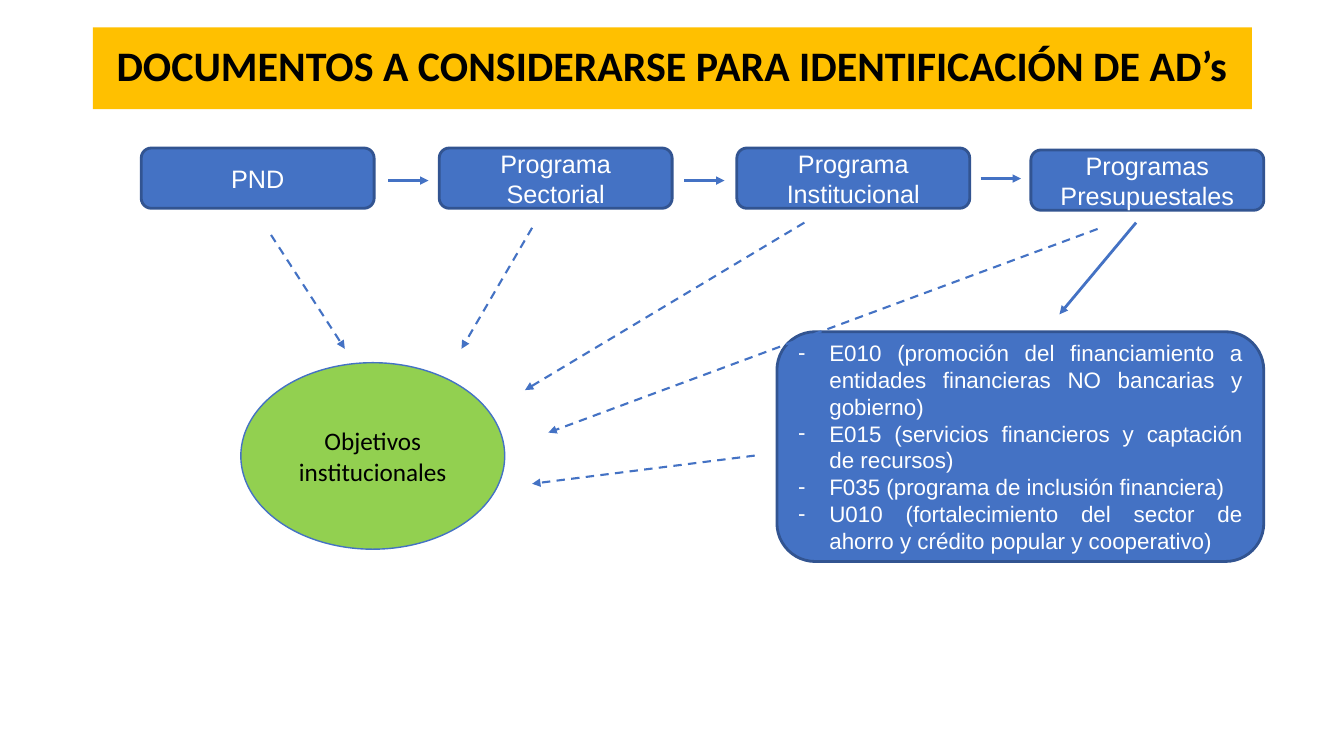
"""Builds the slide on the documents used to identify AD's."""
from dataclasses import dataclass

from lxml.etree import SubElement
from pptx import Presentation
from pptx.dml.color import RGBColor
from pptx.enum.dml import MSO_LINE
from pptx.enum.shapes import MSO_CONNECTOR, MSO_SHAPE
from pptx.enum.text import MSO_ANCHOR, PP_ALIGN
from pptx.oxml.ns import qn
from pptx.util import Cm, Pt

TITLE = "DOCUMENTOS A CONSIDERARSE PARA IDENTIFICACIÓN DE AD’s"
TITLE_FRAME = (2.34, 0.69, 29.21, 2.06)
DOCUMENTS = [
    ("PND", 3.56, 3.73),
    ("Programa Sectorial", 11.07, 3.73),
    ("Programa Institucional", 18.57, 3.73),
    ("Programas Presupuestales", 25.98, 3.78),
]
DOCUMENT_SIZE = (5.87, 1.52)
PROGRAMS = [
    "E010 (promoción del financiamiento a entidades financieras NO bancarias y gobierno)",
    "E015 (servicios financieros y captación de recursos)",
    "F035 (programa de inclusión financiera)",
    "U010 (fortalecimiento del sector de ahorro y crédito popular y cooperativo)",
]
PROGRAMS_FRAME = (19.58, 8.36, 12.27, 5.79)
GOAL = "Objetivos institucionales"
GOAL_FRAME = (6.07, 9.14, 6.65, 4.7)
SEQUENCE_ARROWS = [
    (9.78, 4.55, 10.8, 4.55),
    (17.25, 4.55, 18.26, 4.55),
    (24.71, 4.5, 25.73, 4.5),
    (28.63, 5.61, 26.7, 7.92),
]
GOAL_ARROWS = [
    (6.83, 5.92, 8.69, 8.79),
    (13.41, 5.74, 11.63, 8.79),
    (20.27, 5.61, 13.23, 9.83),
    (27.66, 5.77, 13.82, 10.9),
    (19.02, 11.48, 13.41, 12.19),
]


@dataclass(frozen=True)
class Theme:
    """Colours, fonts and sizes of the slide."""
    amber: str = "FFC000"
    blue: str = "4472C4"
    navy: str = "325491"
    green: str = "92D050"
    black: str = "000000"
    white: str = "FFFFFF"
    heading_font: str = "Calibri"
    body_font: str = "Arial"
    title_size: int = 30
    label_size: int = 18
    list_size: int = 16


THEME = Theme()


def add_box(page, kind, frame, fill, outline, outline_width=2):
    """Add a filled shape whose text is centred vertically."""
    box = page.shapes.add_shape(kind, *map(Cm, frame))
    box.shadow.inherit = False
    box.fill.solid()
    box.fill.fore_color.rgb = RGBColor.from_string(fill)
    if outline:
        box.line.color.rgb = RGBColor.from_string(outline)
        box.line.width = Pt(outline_width)
    else:
        box.line.fill.background()
    box.text_frame.word_wrap = True
    box.text_frame.vertical_anchor = MSO_ANCHOR.MIDDLE
    return box


def write(box, lines, font, size, color, bold=False, bullet=None):
    """Write one paragraph per line, with a hanging bullet if one is given."""
    frame = box.text_frame
    for index, line in enumerate(lines):
        para = frame.add_paragraph() if index else frame.paragraphs[0]
        para.text = line
        para.alignment = PP_ALIGN.JUSTIFY if bullet else PP_ALIGN.CENTER
        if bullet:
            properties = para._p.get_or_add_pPr()
            properties.set("marL", str(Cm(0.79)))
            properties.set("indent", str(-Cm(0.79)))
            SubElement(properties, qn("a:buFont"), typeface=font)
            SubElement(properties, qn("a:buChar"), char=bullet)
        para.font.name = font
        para.font.size = Pt(size)
        para.font.bold = bold
        para.font.color.rgb = RGBColor.from_string(color)


def add_arrow(page, ends, width, dash=None):
    """Add a straight arrow between two points."""
    arrow = page.shapes.add_connector(MSO_CONNECTOR.STRAIGHT, *map(Cm, ends))
    arrow.line.color.rgb = RGBColor.from_string(THEME.blue)
    arrow.line.width = Pt(width)
    if dash:
        arrow.line.dash_style = dash
    SubElement(arrow.line._get_or_add_ln(), qn("a:tailEnd"), type="triangle")
    SubElement(arrow._element.spPr, qn("a:effectLst"))


def main():
    """Lay out the slide and save the deck."""
    deck = Presentation()
    deck.slide_width, deck.slide_height = Cm(33.87), Cm(19.05)
    page = deck.slides.add_slide(deck.slide_layouts[6])

    banner = add_box(page, MSO_SHAPE.RECTANGLE, TITLE_FRAME, THEME.amber, None)
    write(banner, [TITLE], THEME.heading_font, THEME.title_size, THEME.black, bold=True)
    banner.text_frame.paragraphs[0].line_spacing = 0.9

    for name, left, top in DOCUMENTS:
        document = add_box(page, MSO_SHAPE.ROUNDED_RECTANGLE,
                           (left, top, *DOCUMENT_SIZE), THEME.blue, THEME.navy)
        write(document, [name], THEME.body_font, THEME.label_size, THEME.white)

    programs = add_box(page, MSO_SHAPE.ROUNDED_RECTANGLE, PROGRAMS_FRAME,
                       THEME.blue, THEME.navy)
    write(programs, PROGRAMS, THEME.body_font, THEME.list_size, THEME.white, bullet="-")

    goal = add_box(page, MSO_SHAPE.OVAL, GOAL_FRAME, THEME.green, THEME.blue, 1)
    write(goal, [GOAL], THEME.heading_font, THEME.label_size, THEME.black)

    for ends in SEQUENCE_ARROWS:
        add_arrow(page, ends, 2)
    for ends in GOAL_ARROWS:
        add_arrow(page, ends, 1.5, MSO_LINE.DASH)

    deck.save("out.pptx")


if __name__ == "__main__":
    main()
